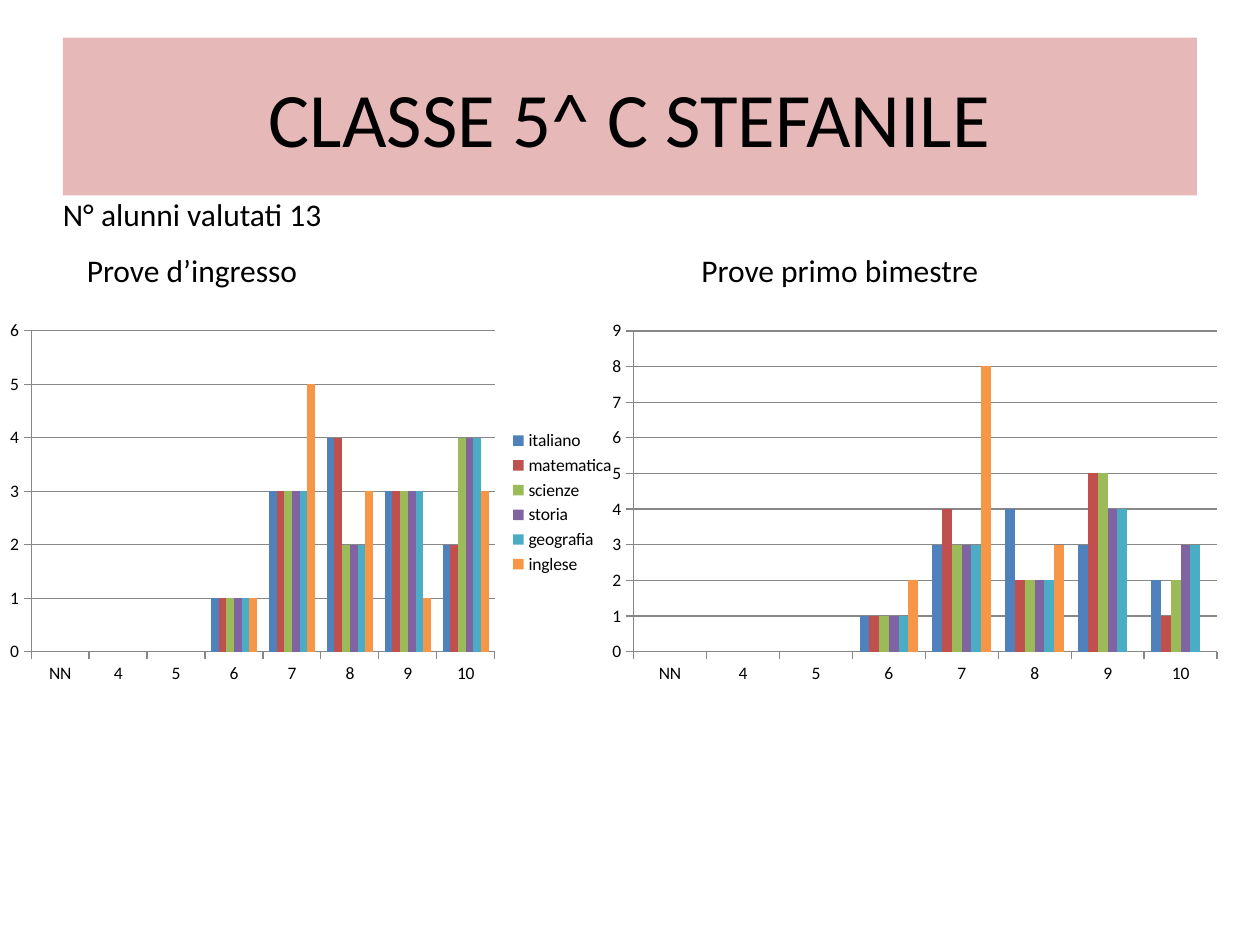
"""Build the slide comparing the marks of class 5C in two rounds of tests."""
from dataclasses import dataclass
from typing import Optional

from pptx import Presentation
from pptx import util as u
from pptx.chart.data import CategoryChartData
from pptx.dml.color import RGBColor
from pptx.enum import chart as charts, shapes, text

FONT = "Calibri"
COLOURS = {
    "text": "000000",
    "banner": "E6B9B8",
    "axis": "878787",
    "italiano": "4F81BD",
    "matematica": "C0504D",
    "scienze": "9BBB59",
    "storia": "8064A2",
    "geografia": "4BACC6",
    "inglese": "F79646",
}
SUBJECTS = ["italiano", "matematica", "scienze", "storia", "geografia", "inglese"]
MARKS = ["NN", "4", "5", "6", "7", "8", "9", "10"]
UNUSED_MARKS = (None, None, None)


@dataclass(frozen=True)
class Label:
    wording: str
    left: float
    top: float
    width: float


@dataclass(frozen=True)
class MarksChart:
    left: float
    maximum: int
    legend: bool
    counts: tuple[tuple[Optional[int], ...], ...]


LABELS = [
    Label("Prove d’ingresso", 1.5, 4.93, 4.8),
    Label("Prove primo bimestre", 13.89, 4.93, 6.15),
    Label("N° alunni valutati 13", 1.02, 3.81, 5.79),
]
FIRST_TERM = MarksChart(12.09, 9, False, (
    (1, 3, 4, 3, 2),
    (1, 4, 2, 5, 1),
    (1, 3, 2, 5, 2),
    (1, 3, 2, 4, 3),
    (1, 3, 2, 4, 3),
    (2, 8, 3, None, None),
))
ENTRY_TESTS = MarksChart(-0.05, 6, True, (
    (1, 3, 4, 3, 2),
    (1, 3, 4, 3, 2),
    (1, 3, 2, 3, 4),
    (1, 3, 2, 3, 4),
    (1, 3, 2, 3, 4),
    (1, 5, 3, 1, 3),
))


def colour(name: str) -> RGBColor:
    """Return the named colour."""
    return RGBColor.from_string(COLOURS[name])


def style_font(font, size: float) -> None:
    """Apply the slide's typeface and text colour."""
    font.name = FONT
    font.size = u.Pt(size)
    font.color.rgb = colour("text")


def write(shape, wording: str, *, size: float = 18, align=text.PP_ALIGN.LEFT,
          anchor=text.MSO_ANCHOR.TOP, wrap: bool = False) -> None:
    """Write one formatted paragraph into a shape."""
    frame = shape.text_frame
    frame.word_wrap = wrap
    frame.vertical_anchor = anchor
    paragraph = frame.paragraphs[0]
    paragraph.alignment = align
    run = paragraph.add_run()
    run.text = wording
    style_font(run.font, size)


def add_banner(slide, wording: str) -> None:
    """Draw the title on its filled band."""
    shape = slide.shapes.add_shape(
        shapes.MSO_SHAPE.RECTANGLE, u.Cm(1.27), u.Cm(0.76), u.Cm(22.86), u.Cm(3.18))
    shape.shadow.inherit = False
    shape.fill.solid()
    shape.fill.fore_color.rgb = colour("banner")
    shape.line.fill.background()
    write(shape, wording, size=44, align=text.PP_ALIGN.CENTER,
          anchor=text.MSO_ANCHOR.MIDDLE, wrap=True)


def add_label(slide, label: Label) -> None:
    """Draw one unwrapped label."""
    shape = slide.shapes.add_textbox(
        u.Cm(label.left), u.Cm(label.top), u.Cm(label.width), u.Cm(1.02))
    write(shape, label.wording)
    shape.text_frame.auto_size = text.MSO_AUTO_SIZE.SHAPE_TO_FIT_TEXT


def add_marks_chart(slide, marks_chart: MarksChart) -> None:
    """Draw the number of pupils per mark and subject."""
    data = CategoryChartData()
    data.categories = MARKS
    for subject, counts in zip(SUBJECTS, marks_chart.counts):
        data.add_series(subject, UNUSED_MARKS + counts)
    chart = slide.shapes.add_chart(
        charts.XL_CHART_TYPE.COLUMN_CLUSTERED, u.Cm(marks_chart.left), u.Cm(6.32),
        u.Cm(12.7), u.Cm(7.62), data).chart
    style_font(chart.font, 10)
    chart.has_title = False
    chart.has_legend = marks_chart.legend
    if marks_chart.legend:
        chart.legend.position = charts.XL_LEGEND_POSITION.RIGHT
        chart.legend.include_in_layout = False

    plot = chart.plots[0]
    plot.vary_by_categories = False
    plot.gap_width = 150
    for subject, series in zip(SUBJECTS, plot.series):
        series.format.fill.solid()
        series.format.fill.fore_color.rgb = colour(subject)

    value_axis = chart.value_axis
    value_axis.minimum_scale = 0
    value_axis.maximum_scale = marks_chart.maximum
    value_axis.major_unit = 1
    value_axis.has_major_gridlines = True
    for part in (value_axis, chart.category_axis, value_axis.major_gridlines):
        part.format.line.color.rgb = colour("axis")
        part.format.line.width = u.Pt(0.75)
    for axis in (value_axis, chart.category_axis):
        axis.major_tick_mark = charts.XL_TICK_MARK.OUTSIDE


def main() -> None:
    """Build and save the presentation."""
    presentation = Presentation()
    presentation.slide_width = u.Cm(25.4)
    presentation.slide_height = u.Cm(19.05)
    slide = presentation.slides.add_slide(presentation.slide_layouts[6])
    add_banner(slide, "CLASSE 5^ C STEFANILE")
    add_marks_chart(slide, FIRST_TERM)
    for label in LABELS:
        add_label(slide, label)
    add_marks_chart(slide, ENTRY_TESTS)
    presentation.save("out.pptx")


if __name__ == "__main__":
    main()
